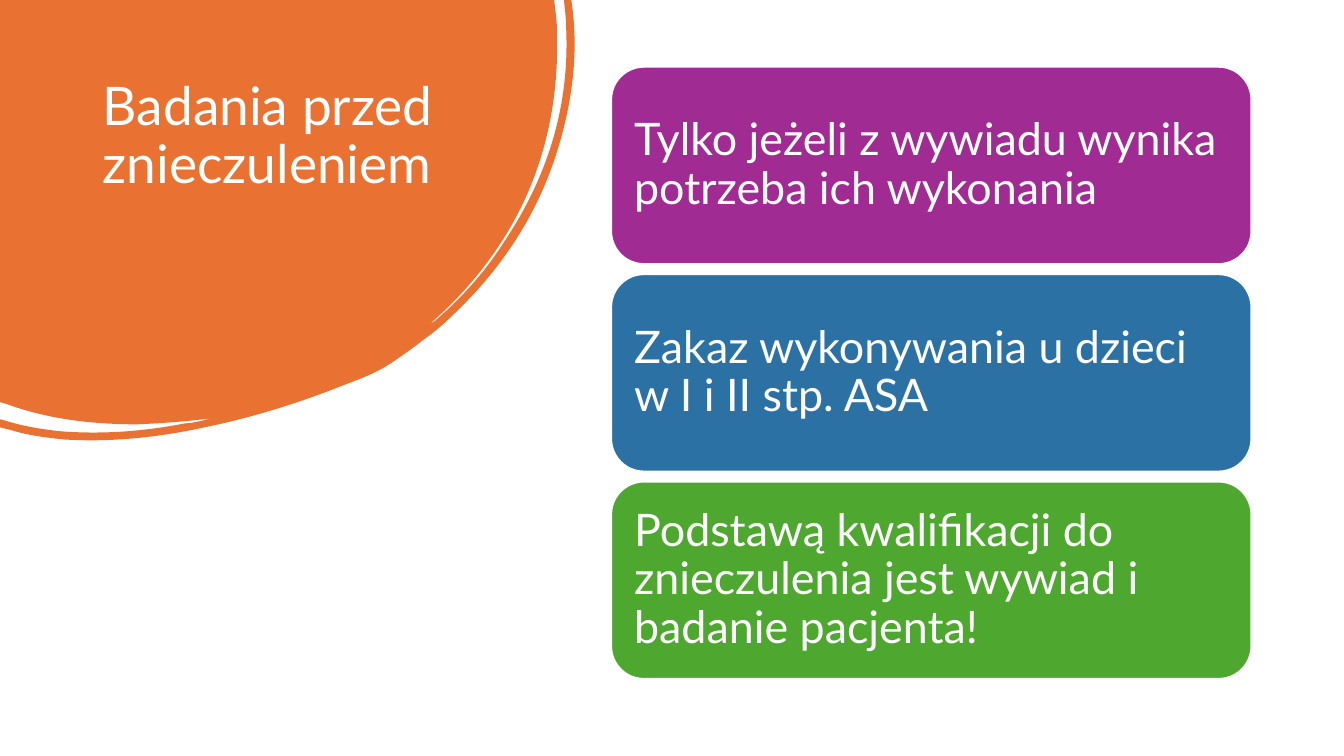
from lxml.etree import SubElement
from pptx import Presentation
from pptx.dml.color import RGBColor
from pptx.enum.shapes import MSO_SHAPE as Shape
from pptx.enum.text import MSO_ANCHOR as Anchor, MSO_AUTO_SIZE as AutoSize, PP_ALIGN as Align
from pptx.oxml.ns import qn
from pptx.util import Cm, Pt

WHITE = RGBColor(0xFF, 0xFF, 0xFF)
ORANGE = RGBColor(0xE9, 0x71, 0x32)
PURPLE = RGBColor(0xA0, 0x2B, 0x93)
BLUE = RGBColor(0x2C, 0x71, 0xA4)
GREEN = RGBColor(0x4E, 0xA7, 0x2E)

CARDS = [
    ("Tylko jeżeli z wywiadu wynika potrzeba ich wykonania", PURPLE),
    ("Zakaz wykonywania u dzieci w I i II stp. ASA", BLUE),
    ("Podstawą kwalifikacji do znieczulenia jest wywiad i badanie pacjenta!", GREEN),
]

# Blob outline on a grid: two numbers make a line, six a curve
BLOB_GRID = (571, 437)
BLOB_OUTLINE = [
    # Inner edge of the right-hand gap, then back along its outer edge
    (550, 0), (552, 17), (553, 26, 553, 36, 553, 45),
    (553, 101, 542, 154, 518, 204), (496, 249, 465, 288, 427, 321),
    (429, 321, 430, 319, 432, 318), (459, 295, 482, 269, 501, 239),
    (543, 176, 565, 107, 562, 30), (562, 21, 561, 12, 560, 3), (560, 0),
    # Outer rim
    (567, 0), (568, 7), (574, 54, 568, 102, 553, 150),
    (533, 214, 497, 268, 448, 314), (439, 323, 429, 331, 419, 338),
    (409, 346, 399, 353, 387, 361), (375, 369, 360, 375, 344, 381),
    (299, 399, 252, 414, 203, 424), (157, 434, 110, 439, 63, 436),
    (45, 434, 28, 432, 12, 427), (0, 424),
    # Bottom gap and the inner edge back to the left side
    (0, 416), (4, 417), (23, 423, 42, 426, 61, 428),
    (103, 431, 143, 428, 184, 420), (189, 420, 193, 419, 198, 418),
    (202, 417, 206, 416, 210, 415), (186, 418, 161, 420, 136, 421),
    (92, 421, 48, 416, 7, 401), (0, 399),
]


def write_text(text_frame, text, size, anchor, margins):
    text_frame.text = text
    text_frame.word_wrap = True
    text_frame.auto_size = AutoSize.NONE
    text_frame.vertical_anchor = anchor
    text_frame.margin_left = text_frame.margin_right = margins[0]
    text_frame.margin_top = text_frame.margin_bottom = margins[1]
    paragraph = text_frame.paragraphs[0]
    paragraph.alignment = Align.LEFT
    paragraph.line_spacing = 0.9
    paragraph.space_before = Pt(0)
    paragraph.font.name = "Lato"
    paragraph.font.size = Pt(size)
    paragraph.font.color.rgb = WHITE


def bend_segments(blob, outline):
    """Turn the straight segments that have control points into curves."""
    outline_element = next(blob._element.iter(qn("a:path")))
    outline_element.set("w", str(BLOB_GRID[0]))
    outline_element.set("h", str(BLOB_GRID[1]))
    for line, segment in zip(outline_element.findall(qn("a:lnTo")), outline):
        if len(segment) == 6:
            curve = SubElement(outline_element, qn("a:cubicBezTo"))
            for x, y in zip(segment[::2], segment[1::2]):
                SubElement(curve, qn("a:pt"), x=str(x), y=str(y))
            outline_element.replace(line, curve)


def add_blob(slide, left, top, width, height):
    builder = slide.shapes.build_freeform(0, 0, scale=width / BLOB_GRID[0])
    builder.add_line_segments([segment[-2:] for segment in BLOB_OUTLINE], close=True)
    blob = builder.convert_to_shape(left, top)
    blob.width, blob.height = width, height
    bend_segments(blob, BLOB_OUTLINE)
    blob.shadow.inherit = False
    blob.fill.solid()
    blob.fill.fore_color.rgb = ORANGE
    blob.line.fill.background()


def place_title(slide, text, left, top, width, height):
    title = slide.shapes.title
    title.left, title.top, title.width, title.height = left, top, width, height
    # Bring the title in front of the blob
    slide.shapes._spTree.append(title._element)
    write_text(title.text_frame, text, 38, Anchor.TOP, (Cm(0.25), Cm(0.13)))


def add_cards(slide, left, top, width, height):
    gap = Cm(0.25)
    card_height = (height - gap * (len(CARDS) - 1)) // len(CARDS)
    for index, (text, color) in enumerate(CARDS):
        card = slide.shapes.add_shape(
            Shape.ROUNDED_RECTANGLE, left, top + index * (card_height + gap), width, card_height)
        card.shadow.inherit = False
        card.fill.solid()
        card.fill.fore_color.rgb = color
        card.line.color.rgb = WHITE
        card.line.width = Pt(1.5)
        write_text(card.text_frame, text, 32, Anchor.MIDDLE, (Cm(0.34), Cm(0.34)))


def main():
    presentation = Presentation()
    presentation.slide_width, presentation.slide_height = Cm(33.87), Cm(19.05)
    slide = presentation.slides.add_slide(presentation.slide_layouts.get_by_name("Title Only"))
    add_blob(slide, Cm(0), Cm(0), Cm(14.5), Cm(11.1))
    place_title(slide, "Badania przed znieczuleniem", Cm(2.34), Cm(1.88), Cm(8.94), Cm(5.64))
    add_cards(slide, Cm(15.4), Cm(1.68), Cm(16.14), Cm(15.43))
    presentation.save("out.pptx")


if __name__ == "__main__":
    main()
